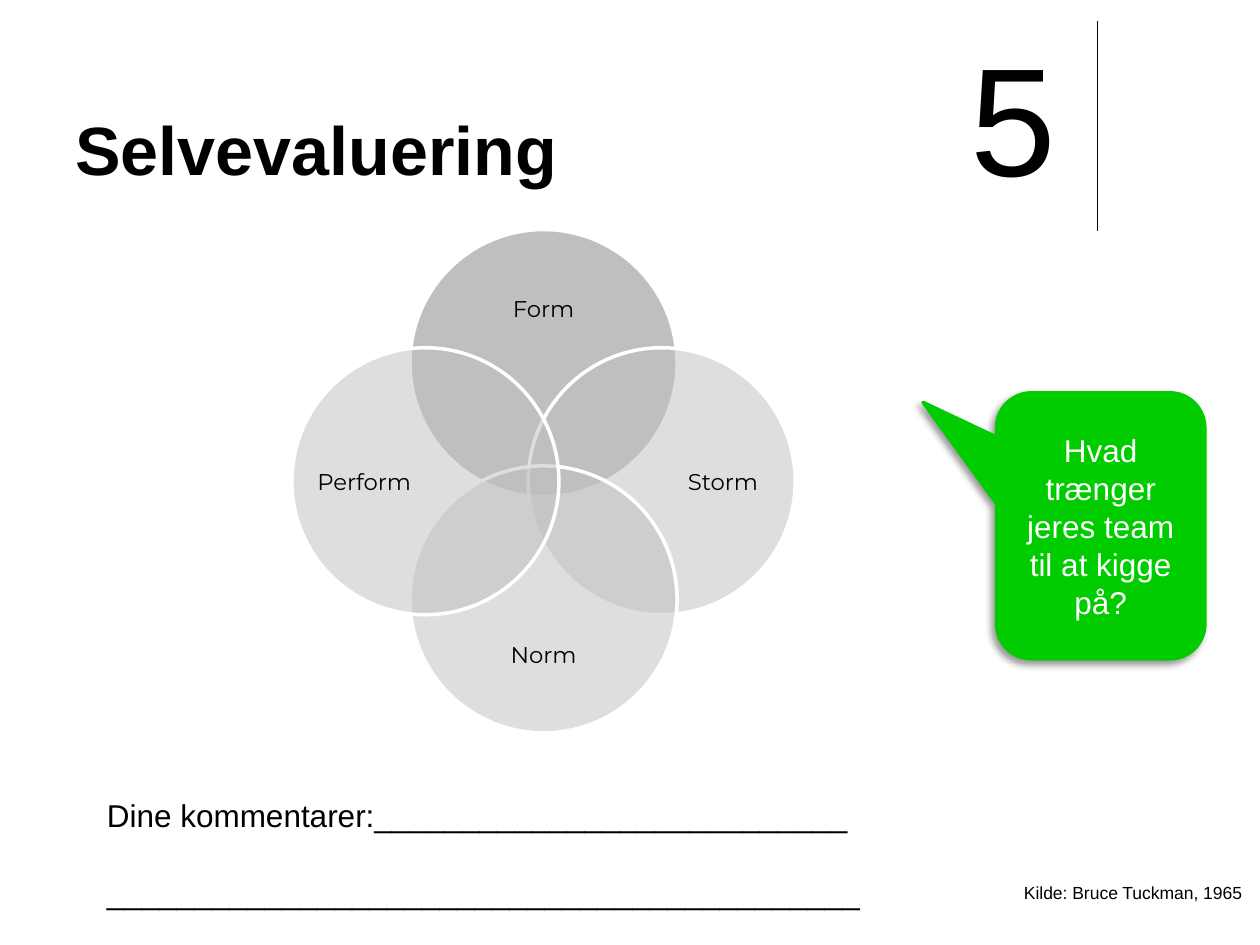
from dataclasses import dataclass

from lxml.etree import SubElement
from pptx import Presentation
from pptx.dml.color import RGBColor
from pptx.enum.shapes import MSO_CONNECTOR, MSO_SHAPE
from pptx.enum.text import MSO_ANCHOR, PP_ALIGN
from pptx.oxml.ns import qn
from pptx.util import Pt

BLACK = RGBColor(0x00, 0x00, 0x00)
WHITE = RGBColor(0xFF, 0xFF, 0xFF)
GREY = RGBColor(0xBF, 0xBF, 0xBF)
GREEN = RGBColor(0x00, 0xCC, 0x00)

CENTRE_X, CENTRE_Y = 310.6, 275
DIAMETER = 152.6
CIRCLE_OFFSET = 67.5
LABEL_OFFSET_X, LABEL_OFFSET_Y = 102.5, 99


@dataclass(frozen=True)
class Frame:
    left: float
    top: float
    width: float
    height: float

    def lengths(self) -> tuple:
        return Pt(self.left), Pt(self.top), Pt(self.width), Pt(self.height)


@dataclass(frozen=True)
class Style:
    size: float
    font: str = "Arial"
    color: RGBColor = BLACK
    bold: bool = False
    align: PP_ALIGN = PP_ALIGN.LEFT
    anchor: MSO_ANCHOR = MSO_ANCHOR.TOP
    wrap: bool = False
    margin: float | None = None
    gap: float = 0


@dataclass(frozen=True)
class Phase:
    name: str
    step_x: int
    step_y: int
    alpha: int = 50


PHASES = (
    Phase("Form", 0, -1, 100),
    Phase("Storm", 1, 0),
    Phase("Norm", 0, 1),
    Phase("Perform", -1, 0),
)
PHASE_STYLE = Style(13, "Montserrat", align=PP_ALIGN.CENTER,
                    anchor=MSO_ANCHOR.MIDDLE, wrap=True, margin=0)


def centred(x: float, y: float, width: float, height: float) -> Frame:
    return Frame(x - width / 2, y - height / 2, width, height)


def write(shape, lines: tuple[str, ...], style: Style) -> None:
    text_frame = shape.text_frame
    text_frame.word_wrap = style.wrap
    text_frame.vertical_anchor = style.anchor
    if style.margin is not None:
        text_frame.margin_left = text_frame.margin_right = Pt(style.margin)
        text_frame.margin_top = text_frame.margin_bottom = Pt(style.margin)
    for index, line in enumerate(lines):
        para = text_frame.add_paragraph() if index else text_frame.paragraphs[0]
        para.text = line
        para.alignment = style.align
        if index:
            para.space_before = Pt(style.gap)
        para.font.name = style.font
        para.font.size = Pt(style.size)
        para.font.bold = style.bold
        para.font.color.rgb = style.color


def add_text(page, frame: Frame, lines: tuple[str, ...], style: Style) -> None:
    write(page.shapes.add_textbox(*frame.lengths()), lines, style)


def add_filled(page, kind: MSO_SHAPE, frame: Frame, fill: RGBColor, line: RGBColor):
    shape = page.shapes.add_shape(kind, *frame.lengths())
    shape.shadow.inherit = False
    shape.fill.solid()
    shape.fill.fore_color.rgb = fill
    shape.line.color.rgb = line
    shape.line.width = Pt(2)
    return shape


def add_phase(page, phase: Phase) -> None:
    circle_frame = centred(CENTRE_X + phase.step_x * CIRCLE_OFFSET,
                           CENTRE_Y + phase.step_y * CIRCLE_OFFSET,
                           DIAMETER, DIAMETER)
    circle = add_filled(page, MSO_SHAPE.OVAL, circle_frame, GREY, WHITE)
    if phase.alpha < 100:
        color = circle._element.spPr.find(qn("a:solidFill"))[0]
        SubElement(color, qn("a:alpha"), val=str(phase.alpha * 1000))
    width, height = (58, 117) if phase.step_x else (117, 48)
    label_frame = centred(CENTRE_X + phase.step_x * LABEL_OFFSET_X,
                          CENTRE_Y + phase.step_y * LABEL_OFFSET_Y,
                          width, height)
    add_text(page, label_frame, (phase.name,), PHASE_STYLE)


def add_divider(page) -> None:
    divider = page.shapes.add_connector(
        MSO_CONNECTOR.STRAIGHT, Pt(627), Pt(12), Pt(627), Pt(132))
    divider.line.color.rgb = BLACK
    divider.line.width = Pt(0.75)
    SubElement(divider._element.spPr, qn("a:effectLst"))


def add_callout(page) -> None:
    callout = add_filled(page, MSO_SHAPE.ROUNDED_RECTANGULAR_CALLOUT,
                         Frame(569.5, 224.5, 119, 152), GREEN, GREEN)
    for index, value in enumerate((-0.853, -0.464, 0.167)):
        callout.adjustments[index] = value
    effects = callout._element.spPr.find(qn("a:effectLst"))
    shadow = SubElement(effects, qn("a:outerShdw"), blurRad=str(Pt(4)),
                        dist=str(Pt(3)), dir=str(135 * 60000), rotWithShape="0")
    color = SubElement(shadow, qn("a:srgbClr"), val=str(BLACK))
    SubElement(color, qn("a:alpha"), val="40000")
    write(callout, ("Hvad trænger jeres team til at kigge på?",),
          Style(18, color=WHITE, align=PP_ALIGN.CENTER,
                anchor=MSO_ANCHOR.MIDDLE, wrap=True))


def main() -> None:
    deck = Presentation()
    deck.slide_width, deck.slide_height = Pt(720), Pt(540)
    page = deck.slides.add_slide(deck.slide_layouts[6])
    add_divider(page)
    for phase in PHASES:
        add_phase(page, phase)
    add_text(page, Frame(578, 500.5, 140.5, 19.5),
             ("Kilde: Bruce Tuckman, 1965",), Style(10))
    add_text(page, Frame(36, 9.5, 594, 102), ("Selvevaluering",),
             Style(39, bold=True, anchor=MSO_ANCHOR.BOTTOM, wrap=True))
    add_callout(page)
    add_text(page, Frame(54, 451.5, 448.5, 72.5),
             ("Dine kommentarer:" + "_" * 27, "_" * 43), Style(18, gap=22))
    add_text(page, Frame(547.5, 9.5, 64, 114), ("5",), Style(88))
    deck.save("out.pptx")


if __name__ == "__main__":
    main()
